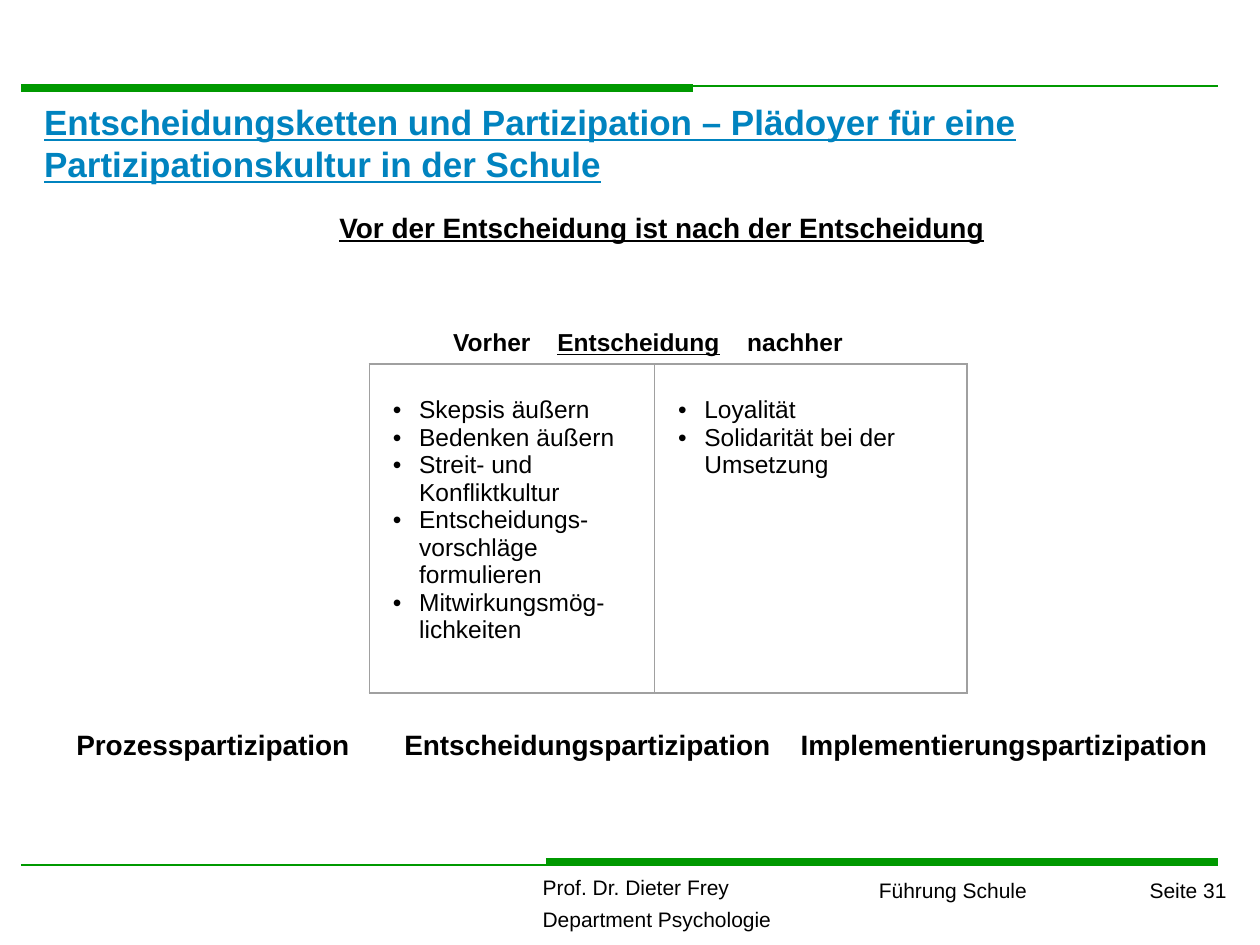
from lxml.etree import SubElement
from pptx import Presentation
from pptx.dml.color import RGBColor
from pptx.enum.shapes import MSO_CONNECTOR
from pptx.enum.text import MSO_ANCHOR, MSO_AUTO_SIZE, PP_ALIGN
from pptx.oxml import parse_xml
from pptx.oxml.ns import nsdecls, qn
from pptx.util import Pt

BLACK = RGBColor(0x00, 0x00, 0x00)
WHITE = RGBColor(0xFF, 0xFF, 0xFF)
GREEN = RGBColor(0x00, 0x99, 0x00)
BLUE = RGBColor(0x00, 0x83, 0xBF)
GREY = RGBColor(0xA0, 0xA0, 0xA0)

RULES = [(276, 696, 49, 1), (12, 396, 50.5, 4.5), (12, 444, 494.5, 1), (312, 696, 492.5, 4.5)]
COLUMNS = [
    (163, ["Skepsis äußern", "Bedenken äußern", "Streit- und Konfliktkultur",
           "Entscheidungs-vorschläge formulieren", "Mitwirkungsmög-lichkeiten"]),
    (178.5, ["Loyalität", "Solidarität bei der Umsetzung"]),
]
PARTICIPATION = [(36.5, 187, "Prozesspartizipation"),
                 (224, 238, "Entscheidungspartizipation"),
                 (450.5, 269, "Implementierungspartizipation")]


def add_span(para, text, size, color=BLACK, bold=False, underline=False):
    """Append one formatted run to a paragraph."""
    span = para.add_run()
    span.text = text
    font = span.font
    font.name, font.size, font.bold, font.underline = "Arial", Pt(size), bold, underline
    font.color.rgb = color


def add_rule(page, left, right, top, width):
    """Draw a horizontal green rule."""
    rule = page.shapes.add_connector(MSO_CONNECTOR.STRAIGHT, Pt(left), Pt(top), Pt(right), Pt(top))
    rule.line.color.rgb = GREEN
    rule.line.width = Pt(width)
    SubElement(rule._element.spPr, qn("a:effectLst"))


def add_box(page, left, top, width, height):
    """Add an empty wrapping text box."""
    box = page.shapes.add_textbox(Pt(left), Pt(top), Pt(width), Pt(height))
    box.text_frame.word_wrap = True
    return box


def add_footer(page, left, top, width, height, lines, align=PP_ALIGN.LEFT, spacing=0.8):
    """Add a footer box with one paragraph per line."""
    frame = add_box(page, left, top, width, height).text_frame
    for index, line in enumerate(lines):
        para = frame.add_paragraph() if index else frame.paragraphs[0]
        para.alignment = align
        para.line_spacing = spacing
        if index:
            para.space_before = Pt(6.5)
        add_span(para, line, 12)


def add_title(page, text):
    """Place and format the slide title."""
    title = page.shapes.title
    title.left, title.top, title.width, title.height = Pt(18), Pt(54), Pt(702), Pt(48)
    frame = title.text_frame
    frame.auto_size = MSO_AUTO_SIZE.NONE
    frame.vertical_anchor = MSO_ANCHOR.TOP
    para = frame.paragraphs[0]
    para.alignment = PP_ALIGN.LEFT
    add_span(para, text, 20, BLUE, True, True)


def add_timeline(page):
    """Add the before, decision and after heading on tab stops."""
    box = add_box(page, 133, 183.5, 474, 36)
    box.fill.solid()
    box.fill.fore_color.rgb = WHITE
    box.text_frame.margin_left = Pt(126)
    para = box.text_frame.paragraphs[0]
    tabs = SubElement(para._p.get_or_add_pPr(), qn("a:tabLst"))
    for stop in (59.5, 168):
        SubElement(tabs, qn("a:tab"), pos=str(Pt(stop)), algn="l")
    for text, underline in (("Vorher\t", False), ("Entscheidung", True), ("\tnachher", False)):
        add_span(para, text, 14, bold=True, underline=underline)


def add_subtitle(page, text):
    """Add the centred subtitle."""
    box = add_box(page, 180.5, 100, 395.5, 84)
    box.text_frame.margin_top = Pt(20)
    para = box.text_frame.paragraphs[0]
    para.alignment = PP_ALIGN.CENTER
    add_span(para, text, 16, bold=True, underline=True)


def set_borders(cell, widths):
    """Set the left, right, top and bottom borders of a cell."""
    properties = cell._tc.get_or_add_tcPr()
    for index, (side, width) in enumerate(zip("LRTB", widths)):
        properties.insert(index, parse_xml(
            f'<a:ln{side} {nsdecls("a")} w="{Pt(width)}"><a:solidFill>'
            f'<a:srgbClr val="{GREY}"/></a:solidFill></a:ln{side}>'))


def add_bullet(para, text):
    """Fill a paragraph as a bulleted line with a hanging indent."""
    properties = para._p.get_or_add_pPr()
    properties.set("marL", str(Pt(15)))
    properties.set("indent", str(-Pt(15)))
    SubElement(properties, qn("a:buFont"), typeface="Arial")
    SubElement(properties, qn("a:buChar"), char="•")
    add_span(para, text, 14)


def add_comparison(page):
    """Add the two-column table of before and after."""
    total = sum(width for width, _ in COLUMNS)
    table = page.shapes.add_table(1, len(COLUMNS), Pt(211), Pt(208), Pt(total), Pt(188)).table
    table.first_row = table.horz_banding = False
    table.rows[0].height = Pt(188)
    for index, (width, items) in enumerate(COLUMNS):
        table.columns[index].width = Pt(width)
        cell = table.cell(0, index)
        cell.fill.background()
        set_borders(cell, (0.5 if index else 1, 1 if index else 0.5, 1, 1))
        cell.margin_left, cell.margin_right, cell.margin_top = Pt(13.5), Pt(13), Pt(18.5)
        for row, item in enumerate(items):
            frame = cell.text_frame
            add_bullet(frame.add_paragraph() if row else frame.paragraphs[0], item)


def main():
    """Build and save the deck."""
    deck = Presentation()
    deck.slide_width, deck.slide_height = Pt(720), Pt(540)
    page = deck.slides.add_slide(deck.slide_layouts[5])
    for rule in RULES:
        add_rule(page, *rule)
    add_footer(page, 433.5, 500.5, 160.5, 19, ["Führung Schule"], PP_ALIGN.RIGHT)
    add_footer(page, 303, 499, 260.5, 37.5, ["Prof. Dr. Dieter Frey", "Department Psychologie"])
    add_footer(page, 570, 502, 138, 17, ["Seite 31"], PP_ALIGN.RIGHT, 0.7)
    add_timeline(page)
    add_subtitle(page, "Vor der Entscheidung ist nach der Entscheidung")
    add_comparison(page)
    for left, width, text in PARTICIPATION:
        box = add_box(page, left, 412, width, 26.5)
        add_span(box.text_frame.paragraphs[0], text, 16, bold=True)
    add_title(page, "Entscheidungsketten und Partizipation – Plädoyer für eine "
                    "Partizipationskultur in der Schule")
    deck.save("out.pptx")


if __name__ == "__main__":
    main()
